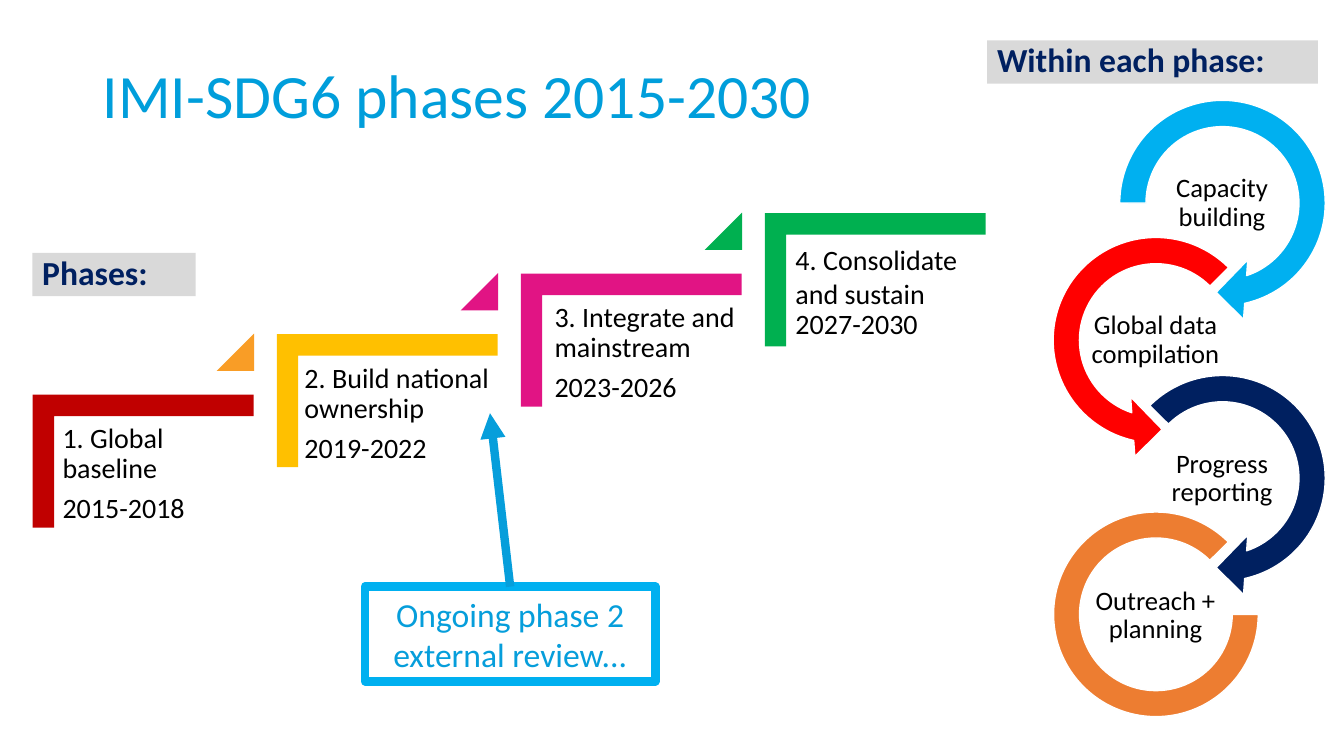
from lxml import etree
from pptx import Presentation
from pptx.dml.color import RGBColor
from pptx.enum.shapes import MSO_CONNECTOR, MSO_SHAPE
from pptx.enum.text import MSO_ANCHOR, MSO_AUTO_SIZE, PP_ALIGN
from pptx.oxml.ns import qn
from pptx.util import Inches, Pt

LEFT, CENTER = PP_ALIGN.LEFT, PP_ALIGN.CENTER
TOP, MIDDLE = MSO_ANCHOR.TOP, MSO_ANCHOR.MIDDLE
STRAIGHT = MSO_CONNECTOR.STRAIGHT
RECTANGLE, CORNER = MSO_SHAPE.RECTANGLE, MSO_SHAPE.CORNER
TRIANGLE, BLOCK_ARC = MSO_SHAPE.ISOSCELES_TRIANGLE, MSO_SHAPE.BLOCK_ARC
RIGHT_ARROW, LEFT_ARROW = MSO_SHAPE.CIRCULAR_ARROW, MSO_SHAPE.LEFT_CIRCULAR_ARROW

FONT = "Calibri"
BLACK, WHITE, GREY, NAVY = "000000", "FFFFFF", "D9D9D9", "002060"
SKY, BLUE, TITLE_BLUE = "00B0F0", "069EDB", "009EDB"

STEP_X, STEP_Y = 2.42, 0.6
# corner colour, triangle colour, text left, text width, paragraphs
PHASES = [
    ("C00000", "F99D26", 0.54, 1.98, ["1. Global baseline", "2015-2018"]),
    ("FFC000", "E11484", 2.94, 2.34, ["2. Build national ownership", "2019-2022"]),
    ("E11484", "00B050", 5.42, 2.35, ["3. Integrate and mainstream", "2023-2026"]),
    ("00B050", None, 7.81, 1.98, ["4. Consolidate and sustain", "2027-2030"]),
]
# shape, colour, left, top, size, adjustments, label left, label top, label
CYCLE = [
    (RIGHT_ARROW, SKY, 10.94, 0.83, 2.37, [0.11, 11.42, 45, 108, 0.125],
     11.46, 1.69, "Capacity building"),
    (LEFT_ARROW, "FF0000", 10.28, 2.19, 2.37, [0.11, 11.42, 63, 189, 0.125],
     10.8, 3.05, "Global data compilation"),
    (RIGHT_ARROW, NAVY, 10.94, 3.56, 2.37, [0.11, 11.42, 45, 135, 0.125],
     11.46, 4.42, "Progress reporting"),
    (BLOCK_ARC, "ED7D31", 10.45, 5.08, 2.03, [0, 189, 0.127],
     10.8, 5.78, "Outreach + planning"),
]


def rgb(value):
    return RGBColor.from_string(value)


def write(shape, paragraphs, size, color, bold=False, align=LEFT, anchor=MIDDLE,
          spacing=0.9, after=0, inset=None):
    frame = shape.text_frame
    frame.word_wrap = True
    frame.auto_size = MSO_AUTO_SIZE.NONE
    frame.vertical_anchor = anchor
    if inset is not None:
        frame.margin_left = frame.margin_right = Inches(inset)
        frame.margin_top = frame.margin_bottom = Inches(inset)
    frame.text = "\n".join(paragraphs)
    for para in frame.paragraphs:
        para.alignment = align
        para.line_spacing = spacing
        para.space_after = Pt(after)
        for span in para.runs:
            span.font.name = FONT
            span.font.size = Pt(size)
            span.font.bold = bold
            span.font.color.rgb = rgb(color)


def add_box(page, kind, left, top, width, height, fill, line=None, weight=1,
            adjustments=()):
    box = page.shapes.add_shape(
        kind, Inches(left), Inches(top), Inches(width), Inches(height))
    box.shadow.inherit = False
    box.fill.solid()
    box.fill.fore_color.rgb = rgb(fill)
    if line:
        box.line.color.rgb = rgb(line)
        box.line.width = Pt(weight)
    else:
        box.line.fill.background()
    for index, value in enumerate(adjustments):
        box.adjustments[index] = value
    return box


def add_text(page, left, top, width, height, paragraphs, **text_format):
    box = page.shapes.add_textbox(
        Inches(left), Inches(top), Inches(width), Inches(height))
    write(box, paragraphs, **text_format)
    return box


def add_heading(page, left, top, width, text):
    box = add_box(page, RECTANGLE, left, top, width, 0.43, GREY)
    write(box, [text], size=24, color=NAVY, bold=True)


def add_title(page, text):
    title = page.shapes.title
    title.left, title.top = Inches(0.92), Inches(0.4)
    title.width, title.height = Inches(11.5), Inches(1.16)
    write(title, [text], size=44, color=TITLE_BLUE)


def add_phases(page):
    for index, (color, next_color, left, width, lines) in enumerate(PHASES):
        shift, rise = index * STEP_X, index * STEP_Y
        corner = add_box(page, CORNER, 0.76 + shift, 3.48 - rise, 1.32, 2.19,
                         color, adjustments=[0.161, 0.161])
        corner.rotation = 90
        box = add_text(page, left, 4.13 - rise, width, 1.73, lines, size=20,
                       color=BLACK, anchor=TOP, after=7, inset=0.08)
        if next_color:
            add_box(page, TRIANGLE, 2.15 + shift, 3.31 - rise, 0.37, 0.37,
                    next_color, adjustments=[1])
        else:
            first = box.text_frame.paragraphs[0]
            first.line_spacing, first.space_after = 1.0, Pt(0)


def add_cycle(page):
    for kind, color, left, top, size, values, text_left, text_top, label in CYCLE:
        add_box(page, kind, left, top, size, size, color, line=WHITE,
                adjustments=values)
        add_text(page, text_left, text_top, 1.32, 0.66, [label], size=19,
                 color=BLACK, align=CENTER, inset=0.01)


def add_review_note(page):
    note = add_box(page, RECTANGLE, 3.62, 5.82, 2.88, 0.94, WHITE, SKY, 6)
    write(note, ["Ongoing phase 2 external review..."], size=24, color=BLUE,
          align=CENTER, spacing=1.0)
    arrow = page.shapes.add_connector(
        STRAIGHT, Inches(5.06), Inches(5.82), Inches(4.86), Inches(4.1))
    arrow.begin_connect(note, 0)
    arrow.line.color.rgb = rgb(BLUE)
    arrow.line.width = Pt(6)
    etree.SubElement(arrow.line._get_or_add_ln(), qn("a:tailEnd"), type="triangle")
    etree.SubElement(arrow._element.spPr, qn("a:effectLst"))


def main():
    deck = Presentation()
    deck.slide_width, deck.slide_height = Inches(13.33), Inches(7.5)
    page = deck.slides.add_slide(deck.slide_layouts[5])
    add_title(page, "IMI-SDG6 phases 2015-2030")
    add_phases(page)
    add_heading(page, 0.32, 2.51, 1.62, "Phases:")
    add_cycle(page)
    add_heading(page, 9.79, 0.4, 3.28, "Within each phase:")
    add_review_note(page)
    deck.save("out.pptx")


if __name__ == "__main__":
    main()
